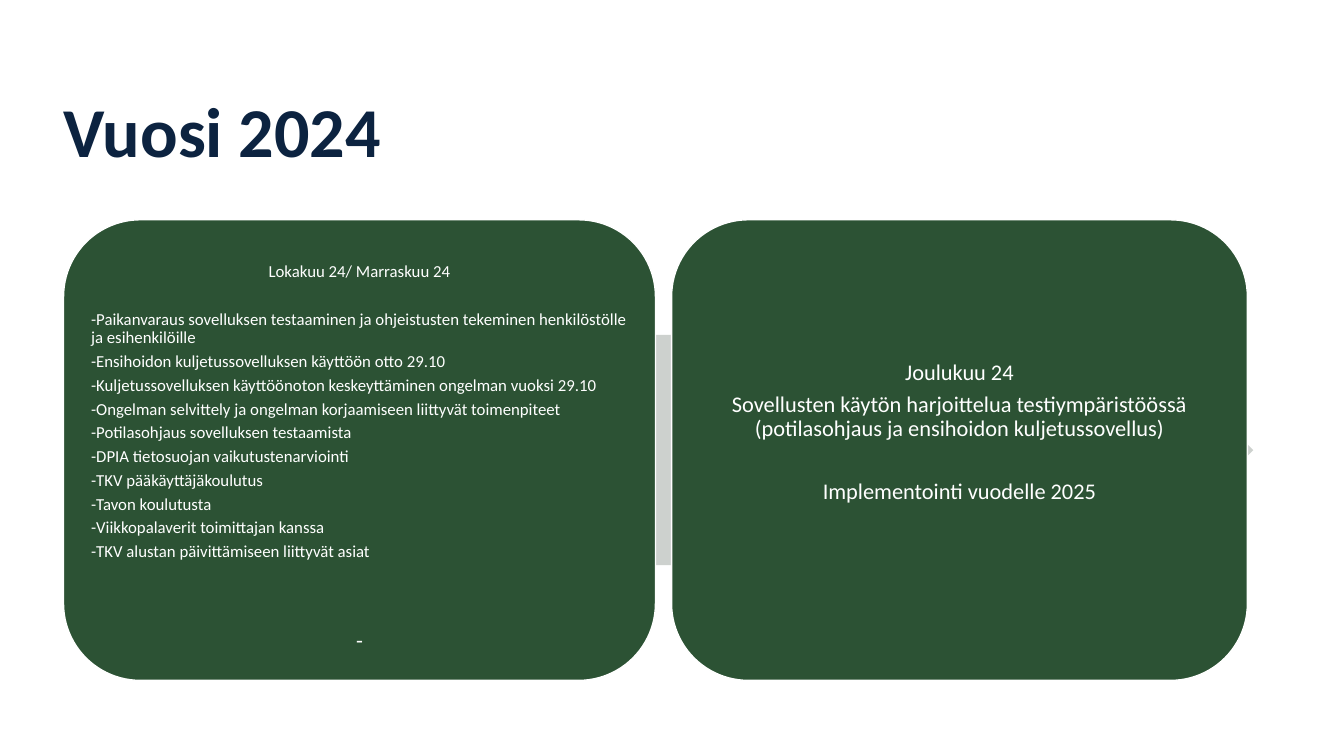
from pptx import Presentation
from pptx.dml.color import RGBColor
from pptx.enum.shapes import MSO_SHAPE
from pptx.enum.text import MSO_ANCHOR, PP_ALIGN
from pptx.util import Inches, Pt

ROUNDED, ARROW = MSO_SHAPE.ROUNDED_RECTANGLE, MSO_SHAPE.RIGHT_ARROW
TOP = MSO_ANCHOR.TOP
LEFT, CENTER = PP_ALIGN.LEFT, PP_ALIGN.CENTER

THEME = {
    "font": "Calibri",
    "navy": RGBColor(0x0C, 0x23, 0x40),
    "green": RGBColor(0x2C, 0x52, 0x34),
    "grey": RGBColor(0xCD, 0xD1, 0xCE),
    "white": RGBColor(0xFF, 0xFF, 0xFF),
    "title": Pt(50),
    "large": Pt(16),
    "small": Pt(12),
}

autumn_tasks = [
    "-Paikanvaraus sovelluksen testaaminen ja ohjeistusten tekeminen henkilöstölle ja esihenkilöille",
    "-Ensihoidon kuljetussovelluksen käyttöön otto 29.10",
    "-Kuljetussovelluksen käyttöönoton keskeyttäminen ongelman vuoksi 29.10",
    "-Ongelman selvittely ja ongelman korjaamiseen liittyvät toimenpiteet",
    "-Potilasohjaus sovelluksen testaamista",
    "-DPIA tietosuojan vaikutustenarviointi",
    "-TKV pääkäyttäjäkoulutus",
    "-Tavon koulutusta",
    "-Viikkopalaverit toimittajan kanssa",
    "-TKV alustan päivittämiseen liittyvät asiat",
]
autumn = [("Lokakuu 24/ Marraskuu 24", "small", CENTER, 0)]
autumn += [(task, "small", LEFT, 4) for task in autumn_tasks]
autumn[1] = (autumn_tasks[0], "small", LEFT, 21.3)
autumn += [("-", "large", CENTER, 48.7)]
december = [
    ("Joulukuu 24", "large", CENTER, 0),
    ("Sovellusten käytön harjoittelua testiympäristöössä "
     "(potilasohjaus ja ensihoidon kuljetussovellus)", "large", CENTER, 5.3),
    ("Implementointi vuodelle 2025", "large", CENTER, 28),
]

prs = Presentation()
prs.slide_width, prs.slide_height = Inches(13.33), Inches(7.5)
slide = prs.slides.add_slide(prs.slide_layouts[5])


def across(percent):
    return round(prs.slide_width * percent / 100)


def down(percent):
    return round(prs.slide_height * percent / 100)


margin, gap = across(4.73), across(1.2)
stage_top, stage_height = down(29.07), down(60.93)

title = slide.shapes.title
title.left, title.top = margin, down(13.73)
title.width, title.height = across(80.05), down(14.13)
heading = title.text_frame
heading.text = "Vuosi 2024"
heading.vertical_anchor = TOP
heading.margin_left = heading.margin_right = 0
heading.margin_top = heading.margin_bottom = 0
heading_line = heading.paragraphs[0]
heading_line.alignment = LEFT
heading_line.line_spacing = 0.8
heading_font = heading_line.runs[0].font
heading_font.name, heading_font.size = THEME["font"], THEME["title"]
heading_font.bold = True
heading_font.color.rgb = THEME["navy"]

timeline = slide.shapes.add_shape(
    ARROW, across(5.48), stage_top, across(87.77), stage_height)
timeline.shadow.inherit = False
timeline.fill.solid()
timeline.fill.fore_color.rgb = THEME["grey"]
timeline.line.fill.background()

stage_left = margin
for width, inset_top, inset_side, lines in [
    (across(44.04), down(2.8), Inches(0.05), autumn),
    (across(42.84), down(15.73), Inches(0.07), december),
]:
    stage = slide.shapes.add_shape(
        ROUNDED, stage_left, stage_top, width, stage_height)
    stage.shadow.inherit = False
    stage.fill.solid()
    stage.fill.fore_color.rgb = THEME["green"]
    stage.line.color.rgb = THEME["white"]
    stage.line.width = Pt(1)
    body = stage.text_frame
    body.word_wrap = True
    body.vertical_anchor = TOP
    body.margin_left = body.margin_right = inset_side
    body.margin_top, body.margin_bottom = inset_top, 0
    body.text = "\n".join(line[0] for line in lines)
    for paragraph, (_, size, alignment, space) in zip(body.paragraphs, lines):
        paragraph.alignment = alignment
        paragraph.line_spacing = 0.9
        paragraph.space_before = Pt(space)
        font = paragraph.runs[0].font
        font.name, font.size = THEME["font"], THEME[size]
        font.color.rgb = THEME["white"]
    stage_left += width + gap

prs.save("out.pptx")
